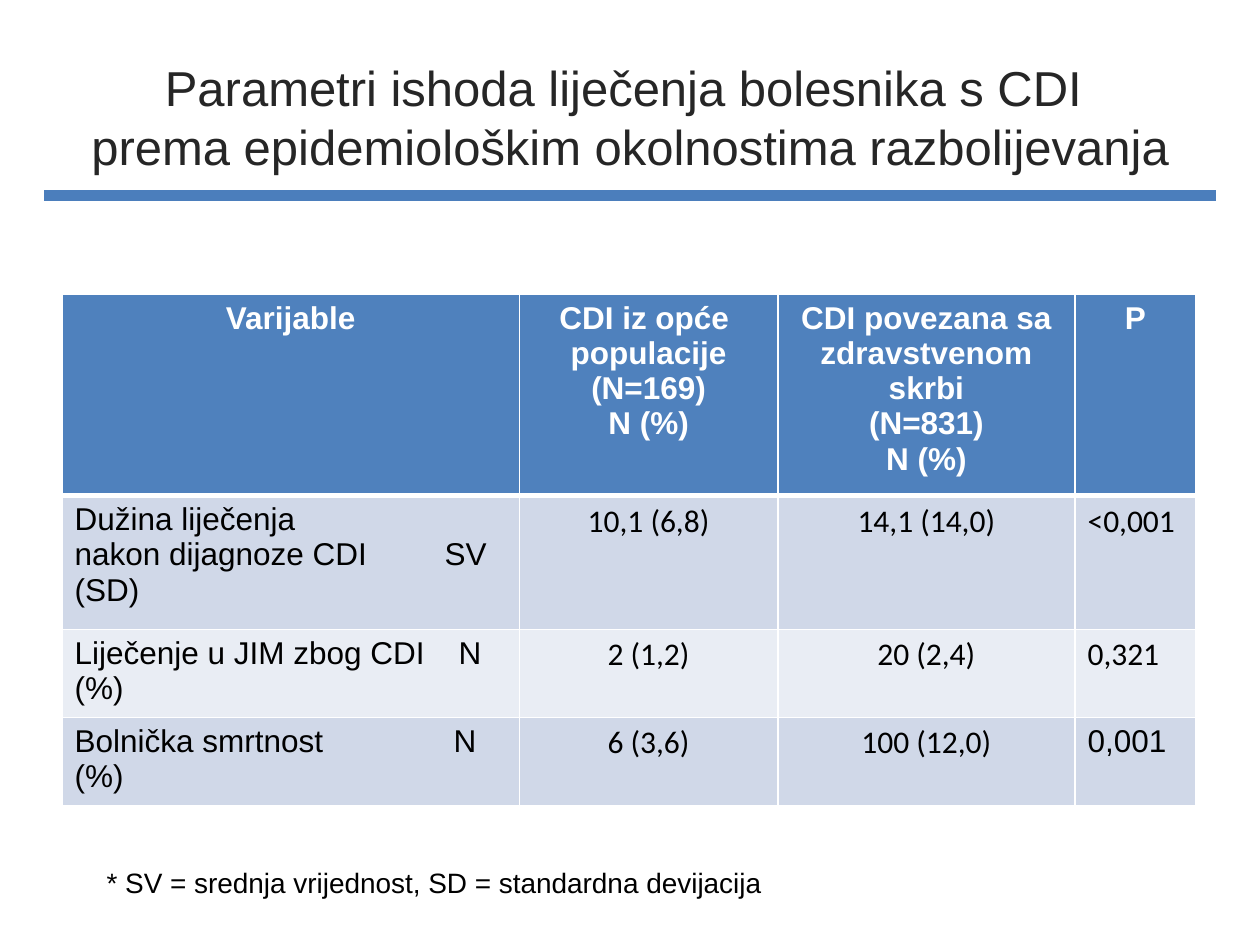
from dataclasses import dataclass

from lxml import etree
from pptx import Presentation
from pptx.dml.color import RGBColor
from pptx.enum.shapes import MSO_CONNECTOR
from pptx.enum.text import MSO_ANCHOR, PP_ALIGN
from pptx.oxml.ns import qn
from pptx.util import Cm, Pt

STRAIGHT = MSO_CONNECTOR.STRAIGHT
MIDDLE, TOP = MSO_ANCHOR.MIDDLE, MSO_ANCHOR.TOP
LEFT, CENTER = PP_ALIGN.LEFT, PP_ALIGN.CENTER


@dataclass(frozen=True)
class Theme:
    title: str = "262626"
    rule: str = "4B7EBC"
    header: str = "4F81BD"
    bands: tuple = ("D0D8E8", "E9EDF4")
    white: str = "FFFFFF"
    black: str = "000000"
    font: str = "Arial"
    number_font: str = "Calibri"
    title_size: int = 28
    table_size: int = 18
    note_size: int = 16


THEME = Theme()

HEADER = [
    ["Varijable"],
    ["CDI iz opće ", "populacije", "(N=169)", "N (%)"],
    ["CDI povezana sa zdravstvenom skrbi", "(N=831)", "N (%)"],
    ["P"],
]
# Label lines, tab position of the measure in cm, values, font of P
ROWS = [
    (["Dužina liječenja", "nakon dijagnoze CDI\tSV (SD)"], 7.46,
     ["10,1 (6,8)", "14,1 (14,0)", "<0,001"], THEME.number_font),
    (["Liječenje u JIM zbog CDI\tN (%)"], 7.74,
     ["2 (1,2)", "20 (2,4)", "0,321"], THEME.number_font),
    (["Bolnička smrtnost\tN (%)"], 7.64,
     ["6 (3,6)", "100 (12,0)", "0,001"], THEME.font),
]
COL_WIDTHS = [9.22, 5.21, 5.99, 2.44]
ROW_HEIGHTS = [3.61, 2.69, 1.55, 1.55]


def add_run(p, text, size, color, font=THEME.font, bold=False):
    r = p.add_run()
    r.text = text
    r.font.name, r.font.size, r.font.bold = font, Pt(size), bold
    r.font.color.rgb = RGBColor.from_string(color)


def add_text_frame(slide, box, anchor):
    tf = slide.shapes.add_textbox(*(Cm(v) for v in box)).text_frame
    tf.word_wrap = True
    tf.vertical_anchor = anchor
    return tf


def add_tab(p, position):
    tabs = etree.SubElement(p._p.get_or_add_pPr(), qn("a:tabLst"))
    etree.SubElement(tabs, qn("a:tab"), pos=str(Cm(position)), algn="l")


def set_borders(cell, top, bottom):
    tc_pr = cell._tc.get_or_add_tcPr()
    for side, width in (("L", 1), ("R", 1), ("T", top), ("B", bottom)):
        ln = etree.SubElement(tc_pr, qn(f"a:ln{side}"), w=str(Pt(width)))
        fill = etree.SubElement(ln, qn("a:solidFill"))
        etree.SubElement(fill, qn("a:srgbClr"), val=THEME.white)


def fill_cell(cell, lines, align, fill, color, font=THEME.font, bold=False, tab=None):
    cell.fill.solid()
    cell.fill.fore_color.rgb = RGBColor.from_string(fill)
    tf = cell.text_frame
    for i, line in enumerate(lines):
        p = tf.add_paragraph() if i else tf.paragraphs[0]
        p.alignment = align
        if tab and "\t" in line:
            add_tab(p, tab)
        add_run(p, line, THEME.table_size, color, font, bold)


def add_title(slide, left, top, width, height):
    p = add_text_frame(slide, (left, top, width, height), MIDDLE).paragraphs[0]
    p.alignment = CENTER
    add_run(p, "Parametri ishoda liječenja bolesnika s CDI ", THEME.title_size, THEME.title)
    p.add_line_break()
    add_run(p, "prema epidemiološkim okolnostima razbolijevanja", THEME.title_size, THEME.title)

    # Rule along the lower edge, wider than the title on both sides
    overhang, y = 0.38, Cm(top + height)
    rule = slide.shapes.add_connector(
        STRAIGHT, Cm(left - overhang), y, Cm(left + width + overhang), y)
    rule.line.width = Pt(6)
    rule.line.color.rgb = RGBColor.from_string(THEME.rule)
    etree.SubElement(rule._element.spPr, qn("a:effectLst"))


def add_outcome_table(slide, left, top):
    table = slide.shapes.add_table(
        len(ROW_HEIGHTS), len(COL_WIDTHS), Cm(left), Cm(top),
        Cm(sum(COL_WIDTHS)), Cm(sum(ROW_HEIGHTS))).table
    for col, width in zip(table.columns, COL_WIDTHS):
        col.width = Cm(width)
    for i, (row, height) in enumerate(zip(table.rows, ROW_HEIGHTS)):
        row.height = Cm(height)
        for cell in row.cells:
            set_borders(cell, top=3 if i == 1 else 1, bottom=3 if i == 0 else 1)

    # Header row
    for c, lines in enumerate(HEADER):
        fill_cell(table.cell(0, c), lines, CENTER, THEME.header, THEME.white, bold=True)

    # Banded body rows
    for i, (label, tab, values, p_font) in enumerate(ROWS):
        band = THEME.bands[i % 2]
        fill_cell(table.cell(i + 1, 0), label, LEFT, band, THEME.black, tab=tab)
        fonts = [THEME.number_font, THEME.number_font, p_font]
        aligns = [CENTER, CENTER, LEFT]
        for c, (value, align, font) in enumerate(zip(values, aligns, fonts), 1):
            fill_cell(table.cell(i + 1, c), [value], align, band, THEME.black, font)


def add_note(slide, left, top, width, height):
    p = add_text_frame(slide, (left, top, width, height), TOP).paragraphs[0]
    add_run(p, "* SV = srednja vrijednost, SD = standardna devijacija",
            THEME.note_size, THEME.black)


def main():
    prs = Presentation()
    prs.slide_width, prs.slide_height = Cm(25.4), Cm(19.05)
    slide = prs.slides.add_slide(prs.slide_layouts[6])
    add_title(slide, 1.27, 0.76, 22.86, 3.18)
    add_outcome_table(slide, 1.25, 5.93)
    add_note(slide, 1.9, 17.32, 18, 0.94)
    prs.save("out.pptx")


if __name__ == "__main__":
    main()
